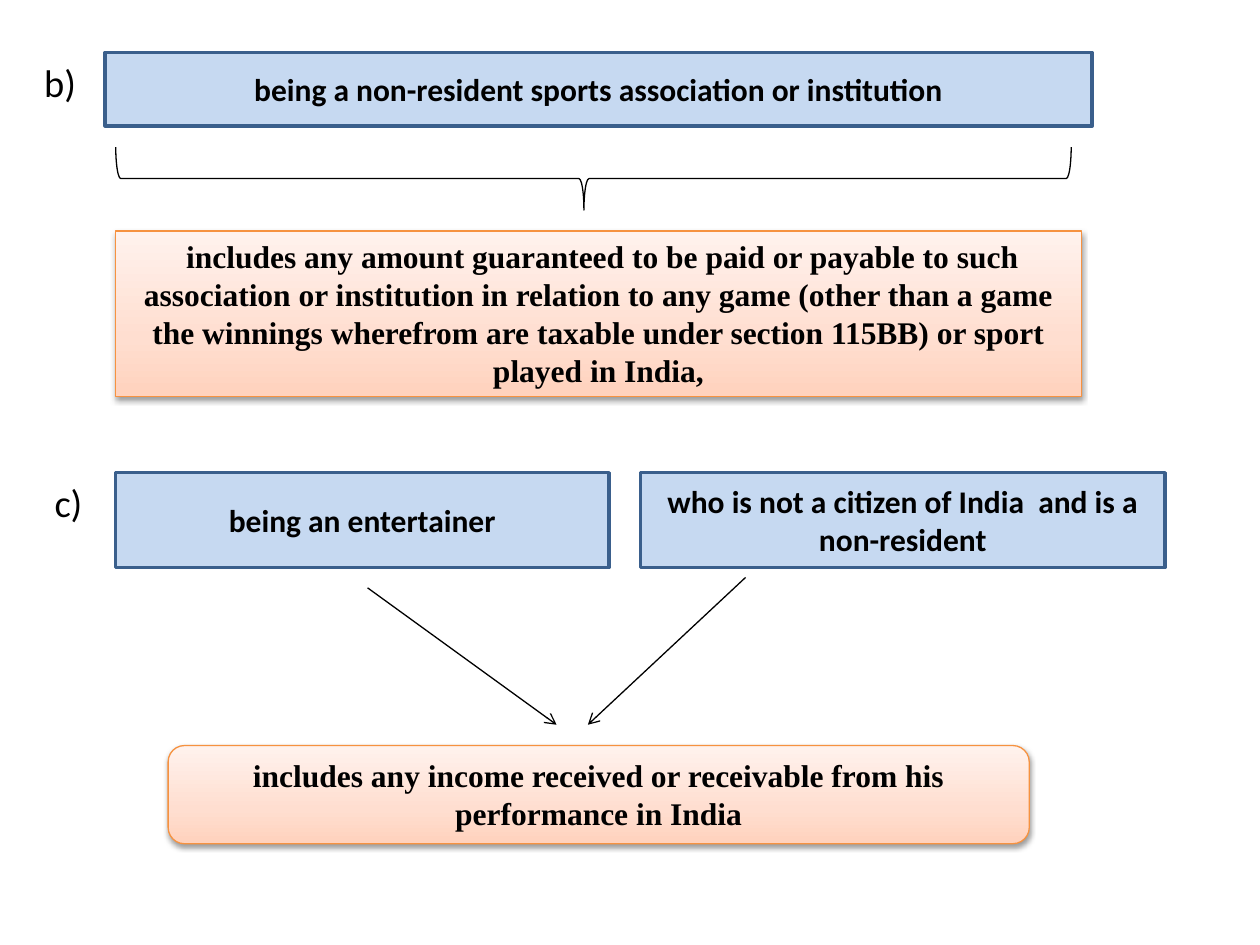
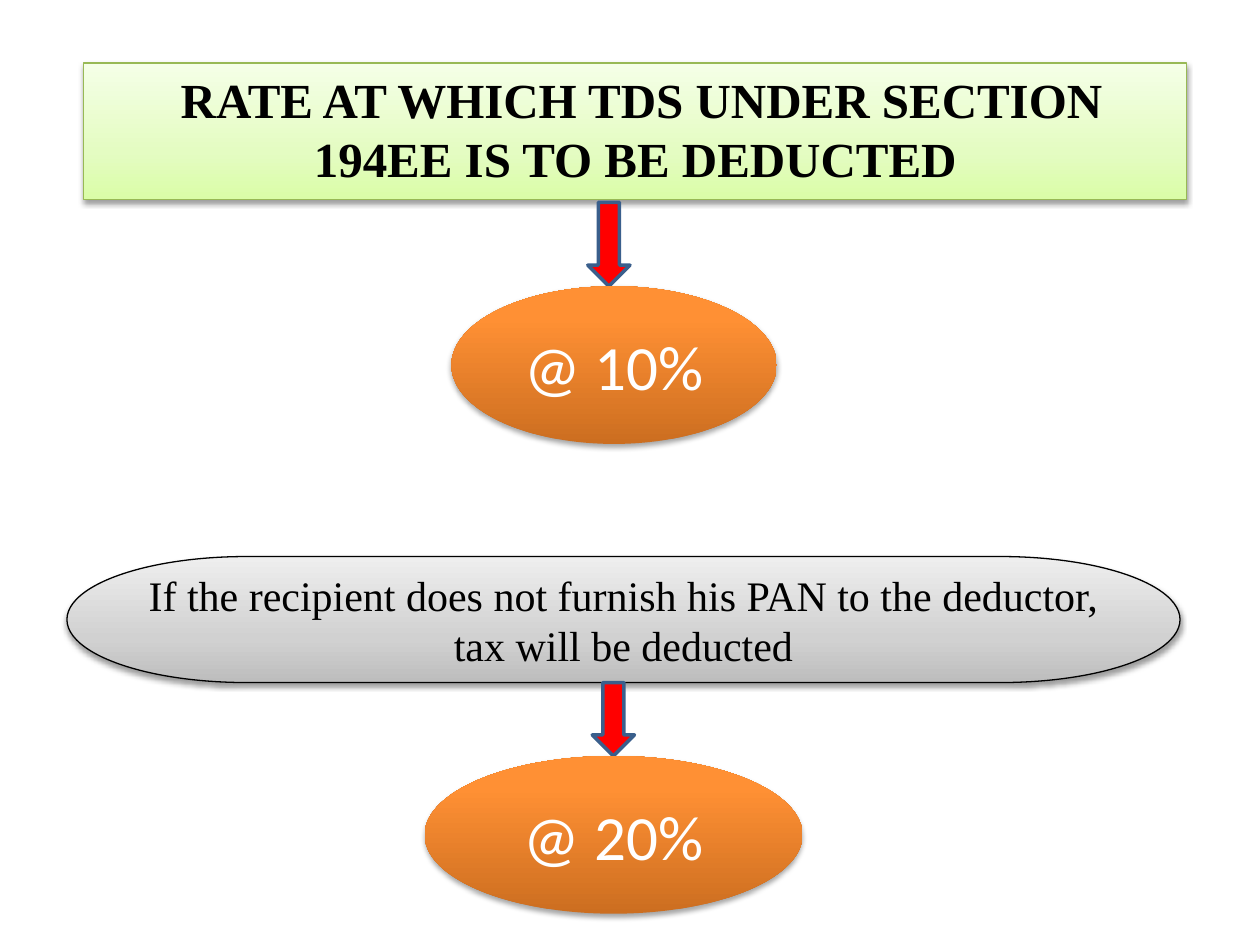
from copy import deepcopy
from dataclasses import dataclass
from typing import Optional

from lxml.etree import SubElement
from pptx import Presentation
from pptx.dml.color import RGBColor
from pptx.enum.shapes import MSO_CONNECTOR, MSO_SHAPE
from pptx.enum.text import MSO_ANCHOR, PP_ALIGN
from pptx.oxml.ns import qn
from pptx.shapes.autoshape import Shape
from pptx.slide import Slide
from pptx.util import Cm, Pt

BLACK = RGBColor(0x00, 0x00, 0x00)
WHITE = RGBColor(0xFF, 0xFF, 0xFF)
RED = RGBColor(0xFF, 0x00, 0x00)
SKY = RGBColor(0xC6, 0xD9, 0xF1)
NAVY = RGBColor(0x3A, 0x5F, 0x8C)
AMBER = RGBColor(0xF6, 0x92, 0x40)
LEAF = RGBColor(0x98, 0xB9, 0x55)

PEACH = ((0, RGBColor(0xFF, 0xD2, 0xBD)), (0.35, RGBColor(0xFF, 0xDE, 0xD0)),
         (1, RGBColor(0xFF, 0xF2, 0xED)))
LIME = ((0, RGBColor(0xDA, 0xFD, 0xA7)), (0.35, RGBColor(0xE4, 0xFC, 0xC2)),
        (1, RGBColor(0xF5, 0xFF, 0xE7)))
SILVER = ((0, RGBColor(0xBD, 0xBD, 0xBD)), (0.35, RGBColor(0xD1, 0xD1, 0xD1)),
          (1, RGBColor(0xEE, 0xEE, 0xEE)))
ORANGE = ((0, RGBColor(0xCC, 0x6E, 0x20)), (0.8, RGBColor(0xFF, 0x90, 0x34)),
          (1, RGBColor(0xFF, 0x91, 0x36)))

SANS = "Calibri"
SERIF = "Times New Roman"
THIN = 0.75


@dataclass(frozen=True)
class Shade:
    alpha: int
    drop: float


@dataclass(frozen=True)
class Look:
    fill: Optional[RGBColor] = None
    blend: tuple = ()
    line: Optional[RGBColor] = None
    width: float = THIN
    shade: Optional[Shade] = None
    font: str = SANS
    size: int = 18
    bold: bool = False
    ink: RGBColor = BLACK
    align: PP_ALIGN = PP_ALIGN.CENTER
    anchor: MSO_ANCHOR = MSO_ANCHOR.MIDDLE


@dataclass(frozen=True)
class Block:
    kind: MSO_SHAPE
    look: Look
    left: float
    top: float
    width: float
    height: float
    text: str = ""

    def frame(self) -> tuple:
        return Cm(self.left), Cm(self.top), Cm(self.width), Cm(self.height)


@dataclass(frozen=True)
class Arrow:
    start: tuple
    end: tuple


SOFT = Shade(38, 1.6)
DEEP = Shade(35, 1.8)
LABEL = Look(size=22, align=PP_ALIGN.LEFT, anchor=MSO_ANCHOR.TOP)
PARTY = Look(fill=SKY, line=NAVY, width=2, bold=True)
BRACE = Look(line=BLACK)
SCOPE = Look(blend=PEACH, line=AMBER, shade=SOFT, font=SERIF, bold=True,
             anchor=MSO_ANCHOR.TOP)
HEAD = Look(blend=LIME, line=LEAF, shade=SOFT, font=SERIF, size=28, bold=True,
            anchor=MSO_ANCHOR.TOP)
POINT = Look(fill=RED, line=NAVY, width=2)
RATE = Look(blend=ORANGE, shade=DEEP, size=36, ink=WHITE)
CASE = Look(blend=SILVER, line=BLACK, shade=SOFT, font=SERIF, size=24)

RECT = MSO_SHAPE.RECTANGLE
ROUND = MSO_SHAPE.ROUNDED_RECTANGLE
OVAL = MSO_SHAPE.OVAL
DOWN = MSO_SHAPE.DOWN_ARROW
PILL = MSO_SHAPE.FLOWCHART_TERMINATOR

PAYEES = (
    Block(RECT, LABEL, 0.64, 1.06, 1.27, 1.18, "b)"),
    Block(RECT, PARTY, 2.12, 1.06, 19.9, 1.48,
          "being a non-resident sports association or institution"),
    Block(RECT, SCOPE, 2.33, 4.66, 19.47, 3.33,
          " includes any amount guaranteed to be paid or payable to such "
          "association or institution in relation to any game (other than a game "
          "the winnings wherefrom are taxable under section 115BB) or sport "
          "played in India,"),
    Block(RECT, LABEL, 0.85, 9.53, 1.48, 1.18, "c)"),
    Block(RECT, PARTY, 2.33, 9.53, 9.95, 1.91, "being an entertainer"),
    Block(RECT, PARTY, 12.91, 9.53, 10.58, 1.91,
          "who is not a citizen of India  and is a non-resident"),
    Block(ROUND, SCOPE, 3.39, 15.03, 17.36, 1.98,
          "includes any income received or receivable from his performance in India"),
)
CURLY = Block(MSO_SHAPE.LEFT_BRACE, BRACE, 11.33, -6.03, 1.27, 19.26)
ARROWS = (
    Arrow((7.41, 11.85), (11.22, 14.61)),
    Arrow((15.03, 11.64), (11.85, 14.61)),
)

TITLE = Block(RECT, HEAD, 1.69, 1.27, 22.23, 2.75,
              " RATE AT WHICH TDS UNDER SECTION 194EE IS TO BE DEDUCTED")
RATES = (
    Block(DOWN, POINT, 11.85, 4.08, 0.85, 1.69),
    Block(OVAL, RATE, 9.1, 5.77, 6.56, 3.18, "@ 10%"),
    Block(PILL, CASE, 1.35, 11.22, 22.44, 2.54,
          "If the recipient does not furnish his PAN to the deductor, "
          "tax will be deducted"),
    Block(DOWN, POINT, 11.94, 13.76, 0.85, 1.48),
    Block(OVAL, RATE, 8.56, 15.24, 7.62, 3.18, "@ 20%"),
)


def paint(shape: Shape, look: Look) -> None:
    fill = shape.fill
    if look.blend:
        fill.gradient()
        fill.gradient_angle = 90
        stops = shape._element.spPr.find(qn("a:gradFill")).find(qn("a:gsLst"))
        stops.append(deepcopy(stops[-1]))
        for stop, (place, tint) in zip(fill.gradient_stops, look.blend):
            stop.position = place
            stop.color.rgb = tint
    elif look.fill is not None:
        fill.solid()
        fill.fore_color.rgb = look.fill
    else:
        fill.background()
    if look.line is None:
        shape.line.fill.background()
    else:
        shape.line.color.rgb = look.line
        shape.line.width = Pt(look.width)


def cast(shape: Shape, shade: Optional[Shade]) -> None:
    shape.shadow.inherit = False
    if shade is None:
        return
    effects = shape._element.spPr.find(qn("a:effectLst"))
    outer = SubElement(effects, qn("a:outerShdw"), blurRad=str(Pt(3.1)),
                       dist=str(Pt(shade.drop)), dir="5400000", rotWithShape="0")
    tint = SubElement(outer, qn("a:srgbClr"), val=str(BLACK))
    SubElement(tint, qn("a:alpha"), val=str(shade.alpha * 1000))


def write(shape: Shape, text: str, look: Look) -> None:
    frame = shape.text_frame
    frame.word_wrap = True
    frame.vertical_anchor = look.anchor
    frame.text = text
    for line in frame.paragraphs:
        line.alignment = look.align
        for run in line.runs:
            run.font.name = look.font
            run.font.size = Pt(look.size)
            run.font.bold = look.bold
            run.font.color.rgb = look.ink


def dress(shape: Shape, block: Block) -> None:
    paint(shape, block.look)
    cast(shape, block.look.shade)
    if block.text:
        write(shape, block.text, block.look)


def draw(slide: Slide, block: Block) -> Shape:
    if block.look is LABEL:
        shape = slide.shapes.add_textbox(*block.frame())
    else:
        shape = slide.shapes.add_shape(block.kind, *block.frame())
    dress(shape, block)
    return shape


def head(slide: Slide, block: Block) -> None:
    title = slide.shapes.title
    title.left, title.top, title.width, title.height = block.frame()
    dress(title, block)


def link(slide: Slide, arrow: Arrow) -> None:
    ends = [Cm(value) for value in arrow.start + arrow.end]
    line = slide.shapes.add_connector(MSO_CONNECTOR.STRAIGHT, *ends)
    line.line.color.rgb = BLACK
    line.line.width = Pt(THIN)
    SubElement(line.line._get_or_add_ln(), qn("a:tailEnd"), type="arrow")
    SubElement(line._element.spPr, qn("a:effectLst"))


def main() -> None:
    deck = Presentation()
    deck.slide_width, deck.slide_height = Cm(25.4), Cm(19.05)

    payees = deck.slides.add_slide(deck.slide_layouts[6])
    for block in PAYEES:
        draw(payees, block)
    brace = draw(payees, CURLY)
    brace.rotation = 270
    brace.adjustments[0], brace.adjustments[1] = 0.08, 0.49
    for arrow in ARROWS:
        link(payees, arrow)

    rates = deck.slides.add_slide(deck.slide_layouts[5])
    head(rates, TITLE)
    for block in RATES:
        draw(rates, block)

    deck.save("out.pptx")


if __name__ == "__main__":
    main()
